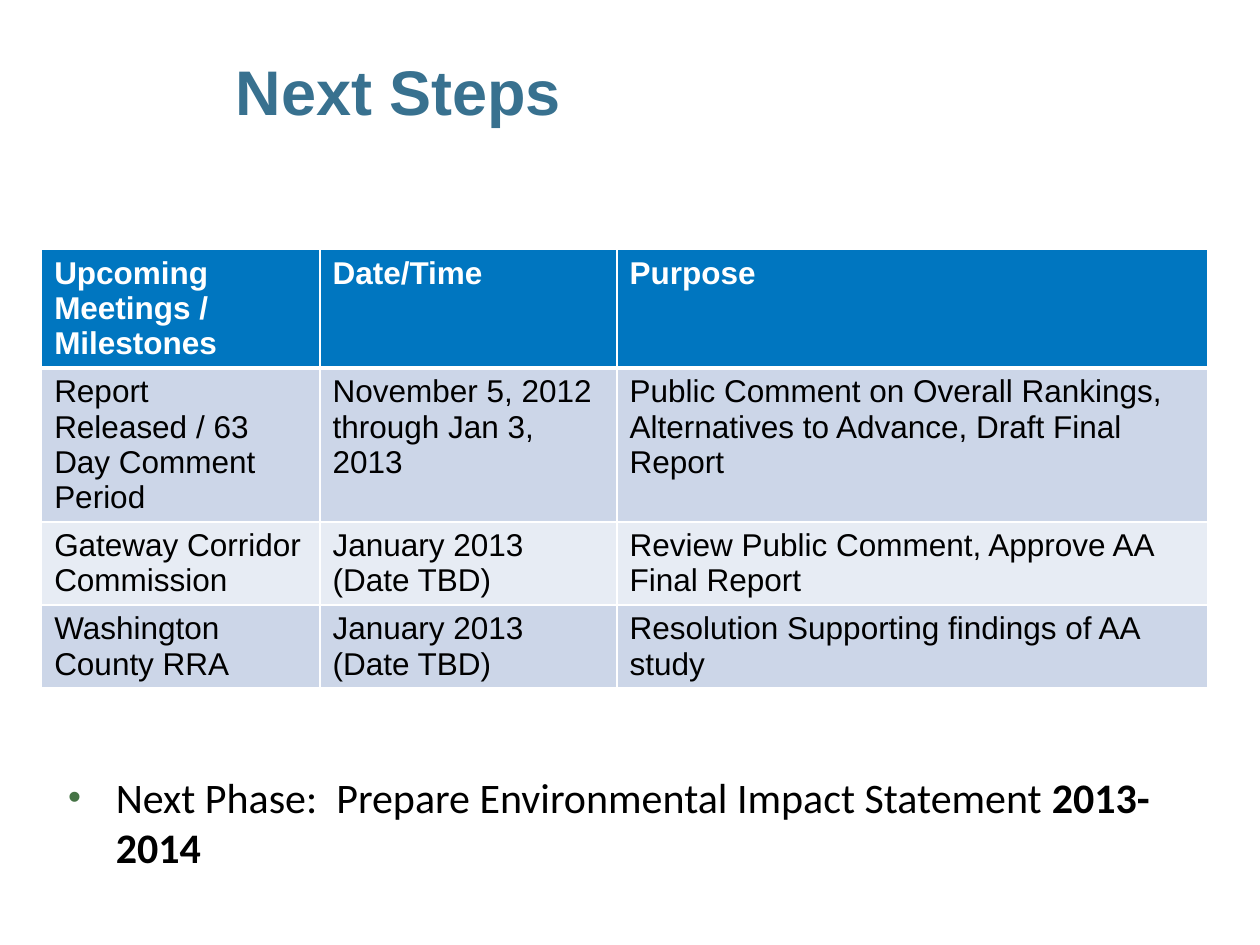
from lxml import etree
from pptx import Presentation
from pptx.dml.color import RGBColor
from pptx.enum.text import MSO_ANCHOR, MSO_AUTO_SIZE, PP_ALIGN
from pptx.oxml.ns import qn
from pptx.util import Cm, Pt

LEFT = PP_ALIGN.LEFT
TOP = MSO_ANCHOR.TOP
MIDDLE = MSO_ANCHOR.MIDDLE
NO_AUTOFIT = MSO_AUTO_SIZE.NONE

TITLE_BLUE = RGBColor(0x38, 0x71, 0x8F)
HEADER_BLUE = RGBColor(0x00, 0x76, 0xC0)
BAND_DARK = RGBColor(0xCC, 0xD6, 0xE8)
BAND_LIGHT = RGBColor(0xE7, 0xEC, 0xF4)
BULLET_GREEN = RGBColor(0x45, 0x73, 0x45)
WHITE = RGBColor(0xFF, 0xFF, 0xFF)
BLACK = RGBColor(0x00, 0x00, 0x00)

COLUMN_WIDTHS = (5.61, 5.99, 11.91)
ROW_HEIGHTS = (2.37, 3.1, 1.67, 1.67)
MEETINGS = (
    ("Upcoming Meetings / Milestones", "Date/Time", "Purpose"),
    ("Report Released / 63 Day Comment Period",
     "November 5, 2012 through Jan 3, 2013",
     "Public Comment on Overall Rankings, Alternatives to Advance, Draft Final Report"),
    ("Gateway Corridor Commission", "January 2013 (Date TBD)",
     "Review Public Comment, Approve AA Final Report"),
    ("Washington County RRA", "January 2013 (Date TBD)",
     "Resolution Supporting findings of AA study"),
)


def set_font(paragraph, name, size, color, bold=False):
    font = paragraph.font
    font.name = name
    font.size = Pt(size)
    font.bold = bold
    font.color.rgb = color


def place(box, left, top, width, height, anchor):
    box.left, box.top = Cm(left), Cm(top)
    box.width, box.height = Cm(width), Cm(height)
    frame = box.text_frame
    frame.word_wrap = True
    frame.auto_size = NO_AUTOFIT
    frame.vertical_anchor = anchor
    return frame


def add_color(parent, color):
    etree.SubElement(parent, qn("a:srgbClr"), val=str(color))


def add_title(page):
    frame = place(page.shapes.title, 4.62, 0.23, 19.99, 3.18, MIDDLE)
    frame.margin_left = Cm(0.13)
    frame.margin_top = frame.margin_right = frame.margin_bottom = Cm(0.05)
    paragraph = frame.paragraphs[0]
    paragraph.text = "Next Steps"
    paragraph.alignment = LEFT
    set_font(paragraph, "Arial", 36, TITLE_BLUE, True)


def add_borders(cell, bottom_width):
    properties = cell._tc.get_or_add_tcPr()
    for side, width in (("L", 1), ("R", 1), ("T", 1), ("B", bottom_width)):
        line = etree.SubElement(properties, qn(f"a:ln{side}"), w=str(Pt(width)))
        add_color(etree.SubElement(line, qn("a:solidFill")), WHITE)


def fill_cell(cell, text, row_number):
    is_header = row_number == 0
    add_borders(cell, 3 if is_header else 1)
    cell.fill.solid()
    band = BAND_DARK if row_number % 2 else BAND_LIGHT
    cell.fill.fore_color.rgb = HEADER_BLUE if is_header else band
    cell.text = text
    color = WHITE if is_header else BLACK
    set_font(cell.text_frame.paragraphs[0], "Arial", 18, color, is_header)


def add_meeting_table(page):
    table = page.shapes.add_table(
        len(MEETINGS), len(COLUMN_WIDTHS), Cm(0.84), Cm(5.03),
        Cm(sum(COLUMN_WIDTHS)), Cm(sum(ROW_HEIGHTS))).table
    for column, width in zip(table.columns, COLUMN_WIDTHS):
        column.width = Cm(width)
    for row_number, (row, height) in enumerate(zip(table.rows, ROW_HEIGHTS)):
        row.height = Cm(height)
        for cell, text in zip(row.cells, MEETINGS[row_number]):
            fill_cell(cell, text, row_number)


def add_bullet(paragraph):
    properties = paragraph._p.get_or_add_pPr()
    properties.set("marL", str(Cm(0.96)))
    properties.set("indent", str(Cm(-0.96)))
    add_color(etree.SubElement(properties, qn("a:buClr")), BULLET_GREEN)
    etree.SubElement(properties, qn("a:buSzPct"), val="88000")
    etree.SubElement(properties, qn("a:buFont"), typeface="Arial")
    etree.SubElement(properties, qn("a:buChar"), char="•")


def add_next_phase(page):
    frame = place(page.placeholders[1], 1.12, 15.42, 23.52, 2.9, TOP)
    paragraph = frame.paragraphs[0]
    add_bullet(paragraph)
    paragraph.space_before = Pt(0)
    set_font(paragraph, "Calibri", 24, BLACK)
    paragraph.add_run().text = "Next Phase:  Prepare Environmental Impact Statement "
    years = paragraph.add_run()
    years.text = "2013-2014"
    years.font.bold = True


def main():
    deck = Presentation()
    deck.slide_width, deck.slide_height = Cm(25.4), Cm(19.05)
    page = deck.slides.add_slide(deck.slide_layouts[1])
    add_title(page)
    add_meeting_table(page)
    add_next_phase(page)
    deck.save("out.pptx")


if __name__ == "__main__":
    main()
